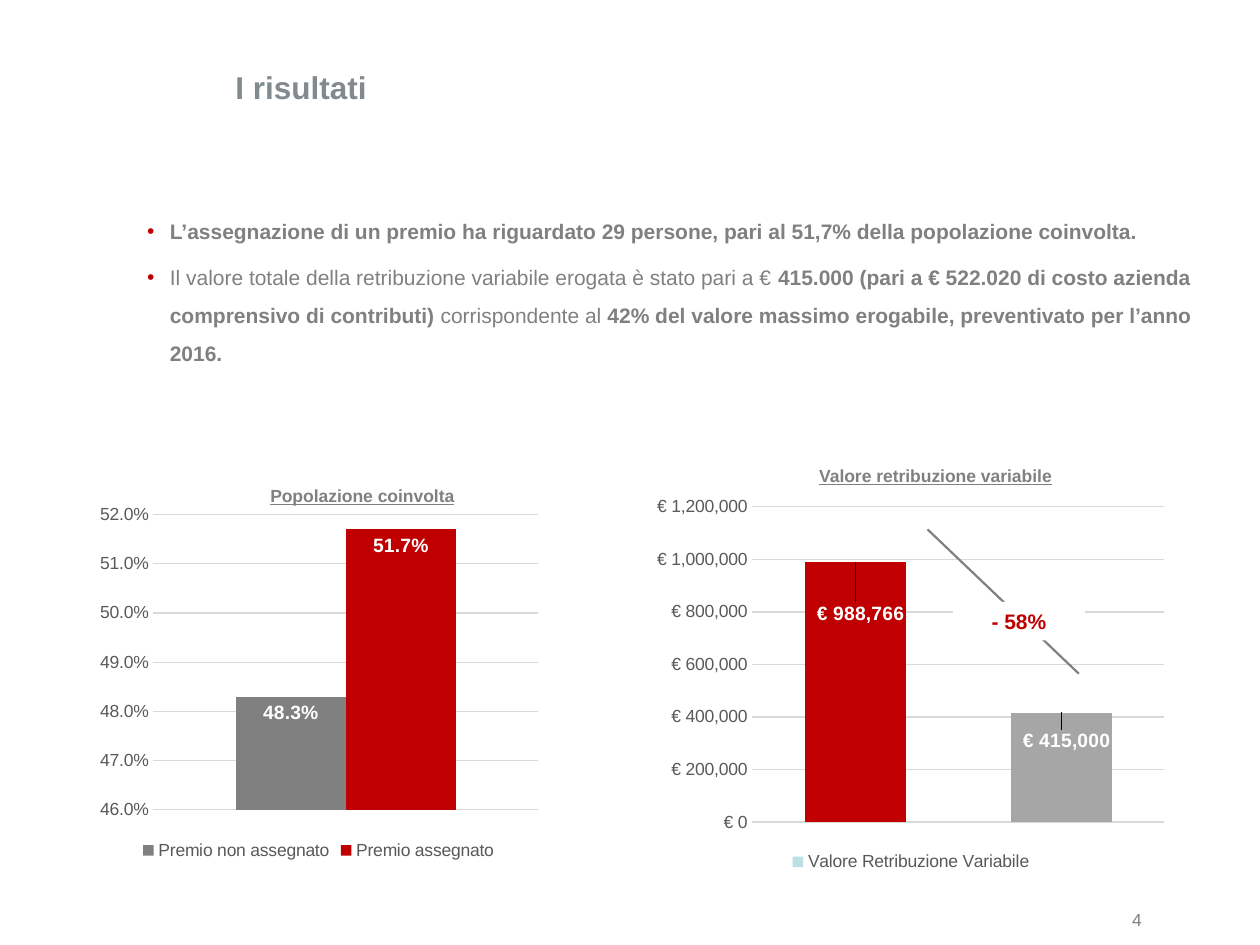
from lxml import etree
from pptx import Presentation
from pptx.chart.data import CategoryChartData
from pptx.dml.color import RGBColor
from pptx.enum.chart import XL_CHART_TYPE, XL_LABEL_POSITION, XL_LEGEND_POSITION, XL_TICK_MARK
from pptx.enum.shapes import MSO_CONNECTOR, MSO_SHAPE
from pptx.enum.text import MSO_ANCHOR, PP_ALIGN
from pptx.oxml.ns import qn
from pptx.util import Pt

COLUMNS = XL_CHART_TYPE.COLUMN_CLUSTERED
INSIDE_END = XL_LABEL_POSITION.INSIDE_END
BOTTOM = XL_LEGEND_POSITION.BOTTOM
NO_TICK = XL_TICK_MARK.NONE
STRAIGHT = MSO_CONNECTOR.STRAIGHT
RECTANGLE = MSO_SHAPE.RECTANGLE
MIDDLE = MSO_ANCHOR.MIDDLE
LEFT, CENTER = PP_ALIGN.LEFT, PP_ALIGN.CENTER

GRAY, RED, LIGHT_GRAY = "808080", "C00000", "A6A6A6"
AXIS_GRAY, GRID_GRAY, WHITE = "595959", "D9D9D9", "FFFFFF"
EURO_FORMAT = '"€"\\ #,##0'
PERCENT_FORMAT = "0.0%"


def color(value):
    return RGBColor.from_string(value)


def points(box):
    return [Pt(length) for length in box]


def style_font(font, size, value, bold=False, underline=False):
    font.name = "Arial"
    font.size = Pt(size)
    font.bold = bold
    font.underline = underline
    font.color.rgb = color(value)


def add_text(slide, box, text, size, value, bold=False, underline=False, align=LEFT):
    frame = slide.shapes.add_textbox(*points(box)).text_frame
    frame.word_wrap = True
    paragraph = frame.paragraphs[0]
    paragraph.text = text
    paragraph.alignment = align
    style_font(paragraph.font, size, value, bold, underline)


def add_bullets(slide, box, bullets):
    frame = slide.shapes.add_textbox(*points(box)).text_frame
    frame.word_wrap = True
    for index, runs in enumerate(bullets):
        paragraph = frame.add_paragraph() if index else frame.paragraphs[0]
        paragraph.line_spacing = 1.5
        paragraph.space_before = Pt(2 if index else 0)
        paragraph.space_after = Pt(3)
        properties = paragraph._p.get_or_add_pPr()
        properties.set("marL", str(Pt(13.5)))
        properties.set("indent", str(-Pt(13)))
        bullet_color = etree.SubElement(properties, qn("a:buClr"))
        etree.SubElement(bullet_color, qn("a:srgbClr"), val=RED)
        etree.SubElement(properties, qn("a:buFont"), typeface="Arial")
        etree.SubElement(properties, qn("a:buChar"), char="•")
        style_font(paragraph.font, 12, GRAY)
        for text, bold in runs:
            run = paragraph.add_run()
            run.text = text
            run.font.bold = bold


def make_layout(**values):
    layout = etree.Element(qn("c:layout"))
    manual = etree.SubElement(layout, qn("c:manualLayout"))
    for name, value in values.items():
        etree.SubElement(manual, qn(f"c:{name}"), val=str(value))
    return layout


def place_plot(chart, x, y, w, h):
    plot_area = chart.plots[0]._element.getparent()
    for old_layout in plot_area.findall(qn("c:layout")):
        plot_area.remove(old_layout)
    plot_area.insert(0, make_layout(layoutTarget="inner", xMode="edge", yMode="edge",
                                    x=x, y=y, w=w, h=h))


def add_columns(slide, box, categories, series_rows, number_format, scale, gap, plot_box):
    data = CategoryChartData(number_format=number_format)
    data.categories = categories
    for name, values, _ in series_rows:
        data.add_series(name, values)
    chart = slide.shapes.add_chart(COLUMNS, *points(box), data).chart
    style_font(chart.font, 10, AXIS_GRAY)
    chart.has_title = False
    chart.has_legend = True
    chart.legend.position = BOTTOM
    chart.legend.include_in_layout = False
    style_font(chart.legend.font, 10, AXIS_GRAY)
    chart.category_axis.visible = False
    axis = chart.value_axis
    axis.minimum_scale, axis.maximum_scale, axis.major_unit = scale
    axis.major_tick_mark = NO_TICK
    axis.format.line.fill.background()
    axis.major_gridlines.format.line.color.rgb = color(GRID_GRAY)
    axis.major_gridlines.format.line.width = Pt(0.75)
    axis.tick_labels.number_format = number_format
    axis.tick_labels.number_format_is_linked = False
    style_font(axis.tick_labels.font, 10, AXIS_GRAY)
    plot = chart.plots[0]
    plot.gap_width = gap
    plot.overlap = 0
    plot.vary_by_categories = False
    for series, (_, _, fill) in zip(plot.series, series_rows):
        series.format.fill.solid()
        series.format.fill.fore_color.rgb = color(fill)
        labels = series.data_labels
        labels.show_value = True
        labels.position = INSIDE_END
        labels.number_format = number_format
        labels.number_format_is_linked = False
        style_font(labels.font, 11, WHITE, bold=True)
    place_plot(chart, *plot_box)
    return chart


def add_population_region(slide, left, top):
    add_columns(slide, (left, top + 10, 262, 211), ["1"],
                [("Premio non assegnato", [0.483], GRAY),
                 ("Premio assegnato", [0.517], RED)],
                PERCENT_FORMAT, (0.46, 0.52, 0.01), 150, (0.14, 0.05, 0.84, 0.8))
    add_text(slide, (left + 79, top, 154, 19.5), "Popolazione coinvolta", 10, GRAY,
             bold=True, underline=True, align=CENTER)


def add_value_region(slide, left, top):
    chart = add_columns(slide, (left, top + 16.5, 302, 222.5), ["1", "2"],
                        [("Valore Retribuzione Variabile", [988766, 415000], "BBE0E3")],
                        EURO_FORMAT, (0, 1200000, 200000), 104, (0.2, 0.05, 0.78, 0.81))
    series = chart.plots[0].series[0]
    columns = [(RED, 0.01, 0.09), (LIGHT_GRAY, 0.01, 0.03)]
    for index, (fill, x, y) in enumerate(columns):
        point = series.points[index]
        point.format.fill.solid()
        point.format.fill.fore_color.rgb = color(fill)
        point.data_label.position = INSIDE_END
        style_font(point.data_label.font, 11, WHITE, bold=True)
    for label, (_, x, y) in zip(series._element.iter(qn("c:dLbl")), columns):
        label.insert(1, make_layout(x=x, y=y))
    add_text(slide, (left + 91.5, top, 154, 19.5), "Valore retribuzione variabile", 10,
             GRAY, bold=True, underline=True)
    add_change(slide, left + 160.5, top + 40.5)


def add_change(slide, left, top):
    line = slide.shapes.add_connector(STRAIGHT, *points((left, top, left + 86.5, top + 82.5)))
    line.line.color.rgb = color(GRAY)
    line.line.width = Pt(1.25)
    etree.SubElement(line._element.spPr, qn("a:effectLst"))
    shape = slide.shapes.add_shape(RECTANGLE, *points((left + 14.5, top + 41.5, 75.5, 22)))
    shape.shadow.inherit = False
    shape.fill.solid()
    shape.fill.fore_color.rgb = color(WHITE)
    shape.line.fill.background()
    frame = shape.text_frame
    frame.vertical_anchor = MIDDLE
    paragraph = frame.paragraphs[0]
    paragraph.text = "- 58%"
    paragraph.alignment = CENTER
    style_font(paragraph.font, 12, RED, bold=True)


def main():
    presentation = Presentation()
    presentation.slide_width, presentation.slide_height = Pt(720), Pt(540)
    slide = presentation.slides.add_slide(presentation.slide_layouts[6])
    add_text(slide, (127.5, 35.5, 484, 34.5), "I risultati", 18, "818A8F", bold=True)
    add_bullets(slide, (76.5, 114, 623, 147.5), [
        [("L’assegnazione di un premio ha riguardato 29 persone, pari al 51,7% "
          "della popolazione coinvolta.", True)],
        [("Il valore totale della retribuzione variabile erogata è stato pari a € ", False),
         ("415.000 (pari a € 522.020 di costo azienda comprensivo di contributi) ", True),
         ("corrispondente al ", False),
         ("42% del valore massimo erogabile, preventivato per l’anno 2016.", True)],
    ])
    add_population_region(slide, 51, 273.5)
    add_value_region(slide, 369.5, 262)
    add_text(slide, (579.5, 516, 140.5, 22.5), "4", 10, GRAY, align=CENTER)
    presentation.save("out.pptx")


if __name__ == "__main__":
    main()
